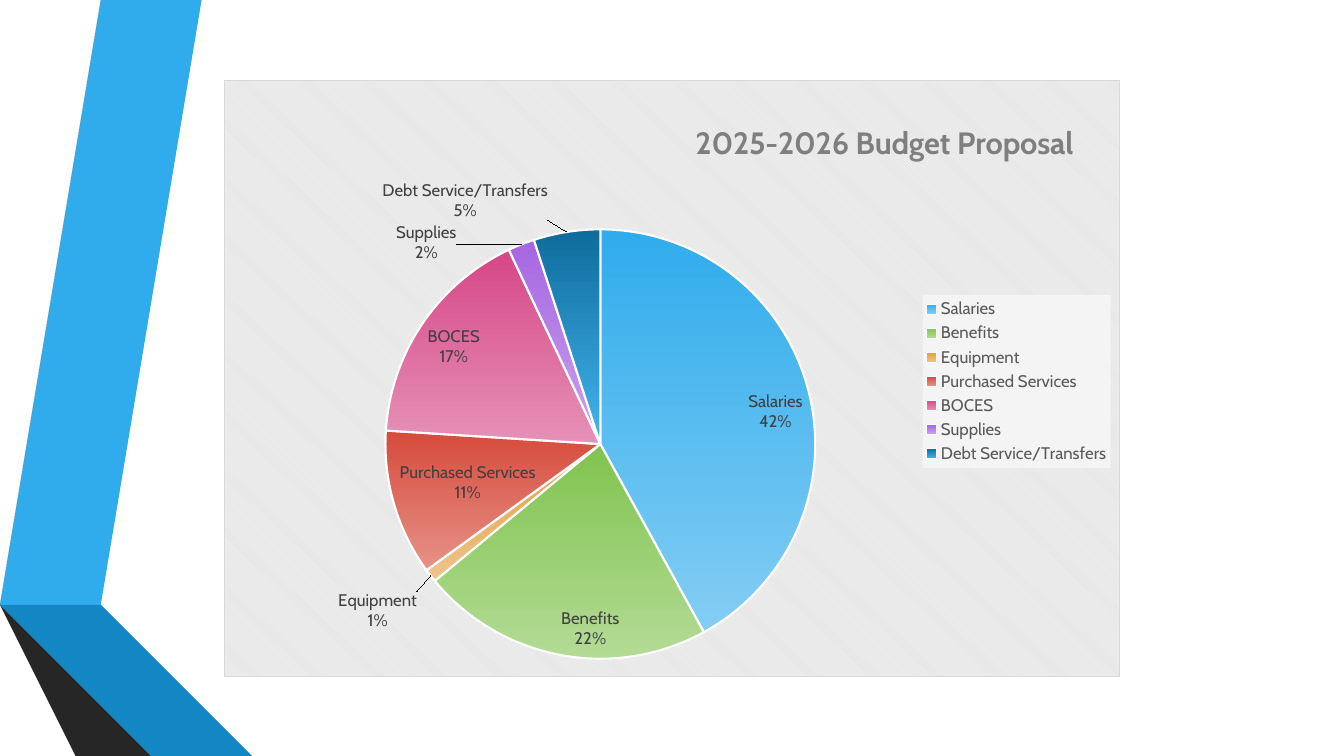
from lxml.etree import SubElement
from pptx import Presentation
from pptx.chart.data import CategoryChartData
from pptx.dml.color import RGBColor
from pptx.dml.fill import FillFormat
from pptx.dml.line import LineFormat
from pptx.enum.chart import XL_CHART_TYPE, XL_LABEL_POSITION, XL_LEGEND_POSITION
from pptx.enum.dml import MSO_PATTERN
from pptx.oxml.ns import qn
from pptx.oxml.xmlchemy import OxmlElement
from pptx.util import Inches, Pt

FONT = "Cabin"

# Points are inches from the top left corner of the decoration.
RIBBONS = [
    ("30ACEC", [(0.5, 5.78), (0.77, 5.83), (1.73, 0), (1.45, 0)]),
    ("595959", [(1.39, 0), (1.11, 0), (0.16, 5.73), (0.44, 5.77)]),
    ("262626", [(0.16, 5.73), (1.45, 7.5), (1.51, 7.5)]),
    ("0C5A82", [(0.5, 5.79), (2.08, 7.5), (2.14, 7.5)]),
    ("1287C3", [(0.5, 5.78), (2.14, 7.5), (2.83, 7.5), (0.77, 5.83)]),
    ("404040", [(0.16, 5.73), (1.51, 7.5), (2.02, 7.5), (0.48, 5.83), (0.44, 5.77)]),
]

# Category, share in percent, gradient start, gradient end
BUDGET = [
    ("Salaries", 42, "30ACEC", "83CDF4"),
    ("Benefits", 22, "80C34F", "B3DB95"),
    ("Equipment", 1, "E29D3E", "EEC48B"),
    ("Purchased Services", 11, "D64A3B", "E69289"),
    ("BOCES", 17, "D64787", "E691B7"),
    ("Supplies", 2, "A666E1", "CAA3ED"),
    ("Debt Service/Transfers", 5, "0E6C9C", "44B4EE"),
]

# Slice index and shift of its outside label, as a share of the chart
OUTSIDE_LABELS = {2: (-0.01, 0.02), 5: (-0.07, 0.04), 6: (-0.02, -0.01)}


def color(hex_value):
    return RGBColor.from_string(hex_value)


def set_font(font, size, hex_value, bold=False):
    font.name = FONT
    font.size = Pt(size)
    font.bold = bold
    font.color.rgb = color(hex_value)


def set_layout(element, after, **values):
    """Place a chart part by shares of the chart, right behind the named child."""
    for old_layout in element.findall(qn("c:layout")):
        element.remove(old_layout)
    layout = OxmlElement("c:layout")
    manual = SubElement(layout, qn("c:manualLayout"))
    for name, value in values.items():
        SubElement(manual, qn(f"c:{name}")).set("val", str(value))
    if after:
        element.find(qn(after)).addnext(layout)
    else:
        element.insert(0, layout)


def add_shape_properties(sibling):
    """Add an spPr element behind a sibling and return it."""
    properties = OxmlElement("c:spPr")
    sibling.addnext(properties)
    return properties


def draw_ribbons(slide, left, top):
    for fill, points in RIBBONS:
        placed = [(left + x, top + y) for x, y in points]
        builder = slide.shapes.build_freeform(*placed[0], scale=Inches(1))
        builder.add_line_segments(placed[1:], close=True)
        shape = builder.convert_to_shape()
        shape.shadow.inherit = False
        shape.fill.solid()
        shape.fill.fore_color.rgb = color(fill)
        shape.line.fill.background()


def style_background(chart):
    properties = add_shape_properties(chart.element.find(qn("c:chart")))
    fill = FillFormat.from_fill_parent(properties)
    fill.patterned()
    fill.pattern = MSO_PATTERN.DARK_DOWNWARD_DIAGONAL
    fill.fore_color.rgb = color("FFFFFF")
    fill.back_color.rgb = color("E6E6E6")
    border = LineFormat(properties)
    border.color.rgb = color("D9D9D9")
    border.width = Pt(0.75)


def style_title(chart):
    chart.has_title = True
    title = chart.chart_title
    run = title.text_frame.paragraphs[0].add_run()
    run.text = "2025-2026 Budget Proposal"
    set_font(run.font, 22, "7F7F7F", bold=True)
    title.include_in_layout = False
    set_layout(title._element, "c:tx", xMode="edge", yMode="edge", x=0.52, y=0.06)


def style_legend(chart):
    chart.has_legend = True
    legend = chart.legend
    legend.position = XL_LEGEND_POSITION.RIGHT
    legend.include_in_layout = False
    set_font(legend.font, 12, "595959")
    set_layout(legend._element, "c:legendPos", xMode="edge", yMode="edge",
               x=0.78, y=0.36, w=0.21, h=0.29)
    properties = add_shape_properties(legend._element.find(qn("c:overlay")))
    fill = FillFormat.from_fill_parent(properties)
    fill.solid()
    fill.fore_color.rgb = color("FFFFFF")
    tint = next(properties.iter(qn("a:srgbClr")))
    SubElement(tint, qn("a:alpha")).set("val", "50000")


def style_slices(series):
    for index, (_, _, start, end) in enumerate(BUDGET):
        slice_format = series.points[index].format
        slice_format.fill.gradient()
        slice_format.fill.gradient_angle = 270
        for stop, hex_value in zip(slice_format.fill.gradient_stops, (start, end)):
            stop.color.rgb = color(hex_value)
        slice_format.line.color.rgb = color("FFFFFF")
        slice_format.line.width = Pt(1.5)


def add_separator(element):
    """Put the percentage of a label on its own line."""
    separator = OxmlElement("c:separator")
    separator.text = "\n"
    element.find(qn("c:showBubbleSize")).addnext(separator)


def add_labels(series):
    labels = series.data_labels
    labels.show_value = False
    labels.show_category_name = True
    labels.show_percentage = True
    labels.number_format = "0%"
    labels.number_format_is_linked = False
    labels.position = XL_LABEL_POSITION.INSIDE_END
    set_font(labels.font, 12, "404040")
    add_separator(labels._element)
    for index, (x, y) in OUTSIDE_LABELS.items():
        label = series.points[index].data_label
        set_font(label.font, 12, "404040")
        label.position = XL_LABEL_POSITION.OUTSIDE_END
    for element in labels._element.findall(qn("c:dLbl")):
        x, y = OUTSIDE_LABELS[int(element.find(qn("c:idx")).get("val"))]
        set_layout(element, "c:idx", x=x, y=y)
        for name, shown in (("showVal", "0"), ("showCatName", "1"), ("showPercent", "1")):
            element.find(qn(f"c:{name}")).set("val", shown)
        add_separator(element)


def draw_budget_chart(slide, left, top, width, height):
    data = CategoryChartData()
    data.categories = [name for name, *_ in BUDGET]
    data.add_series("Series 1", [share for _, share, *_ in BUDGET])
    chart = slide.shapes.add_chart(
        XL_CHART_TYPE.PIE, Inches(left), Inches(top), Inches(width), Inches(height), data
    ).chart
    set_font(chart.font, 10, "000000")
    style_background(chart)
    style_title(chart)
    style_legend(chart)
    plot = chart.plots[0]
    plot.vary_by_categories = True
    style_slices(plot.series[0])
    add_labels(plot.series[0])
    plot_area = next(chart.element.iter(qn("c:plotArea")))
    set_layout(plot_area, None, layoutTarget="inner", xMode="edge", yMode="edge",
               x=0.18, y=0.25, w=0.48, h=0.72)


def main():
    presentation = Presentation()
    presentation.slide_width = Inches(13.33)
    presentation.slide_height = Inches(7.5)
    slide = presentation.slides.add_slide(presentation.slide_layouts[6])
    draw_ribbons(slide, 0, 0)
    draw_budget_chart(slide, 2.22, 0.79, 8.89, 5.93)
    presentation.save("out.pptx")


if __name__ == "__main__":
    main()
